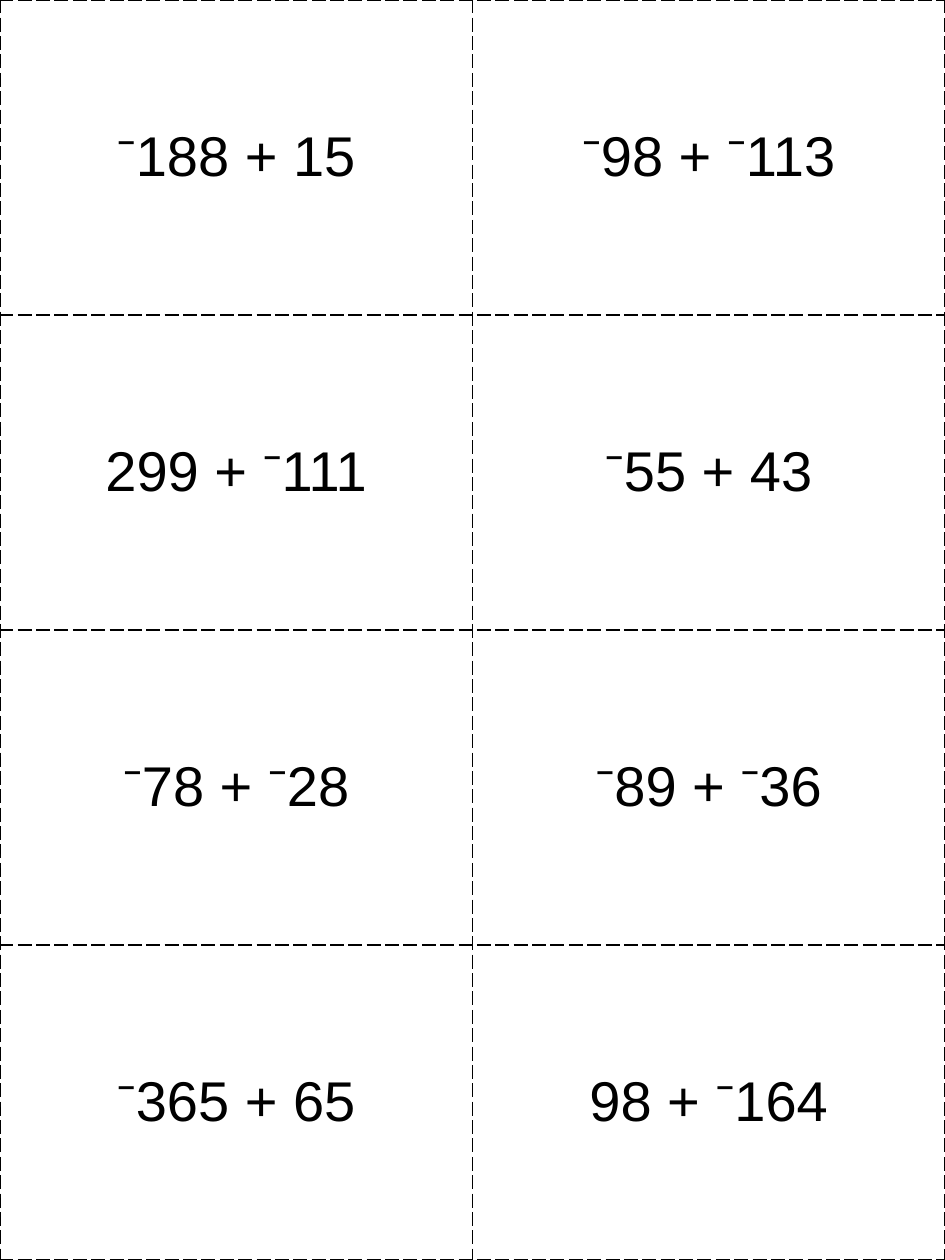
from lxml.etree import SubElement
from pptx import Presentation
from pptx.dml.color import RGBColor
from pptx.enum.text import MSO_ANCHOR, PP_ALIGN
from pptx.oxml.ns import qn
from pptx.util import Pt

BLACK = RGBColor(0, 0, 0)
WIDTH, HEIGHT = Pt(540), Pt(720)
PROBLEMS = [
    ["⁻188 + 15", "⁻98 + ⁻113"],
    ["299 + ⁻111", "⁻55 + 43"],
    ["⁻78 + ⁻28", "⁻89 + ⁻36"],
    ["⁻365 + 65", "98 + ⁻164"],
]
CELL_FORMAT = {
    "vertical_anchor": MSO_ANCHOR.MIDDLE,
    "margin_left": Pt(7.2),
    "margin_right": Pt(7.2),
    "margin_top": Pt(3.6),
    "margin_bottom": Pt(3.6),
}
FONT_FORMAT = {"name": "Arial", "size": Pt(32), "bold": False}


def add_dashed_borders(cell):
    properties = cell._tc.get_or_add_tcPr()
    for side in ("a:lnL", "a:lnR", "a:lnT", "a:lnB"):
        line = SubElement(properties, qn(side), w=str(Pt(1)))
        fill = SubElement(line, qn("a:solidFill"))
        SubElement(fill, qn("a:srgbClr"), val=str(BLACK))
        SubElement(line, qn("a:prstDash"), val="lgDash")


presentation = Presentation()
presentation.slide_width, presentation.slide_height = WIDTH, HEIGHT
slide = presentation.slides.add_slide(presentation.slide_layouts[6])

table = slide.shapes.add_table(
    len(PROBLEMS), len(PROBLEMS[0]), 0, 0, WIDTH, HEIGHT
).table
table.first_row = table.horz_banding = False

for row, problems in enumerate(PROBLEMS):
    for column, problem in enumerate(problems):
        cell = table.cell(row, column)
        for name, value in CELL_FORMAT.items():
            setattr(cell, name, value)
        # The schema wants the borders ahead of the fill.
        add_dashed_borders(cell)
        cell.fill.background()

        paragraph = cell.text_frame.paragraphs[0]
        paragraph.alignment = PP_ALIGN.CENTER
        run = paragraph.add_run()
        run.text = problem
        for name, value in FONT_FORMAT.items():
            setattr(run.font, name, value)
        run.font.color.rgb = BLACK

presentation.save("out.pptx")
